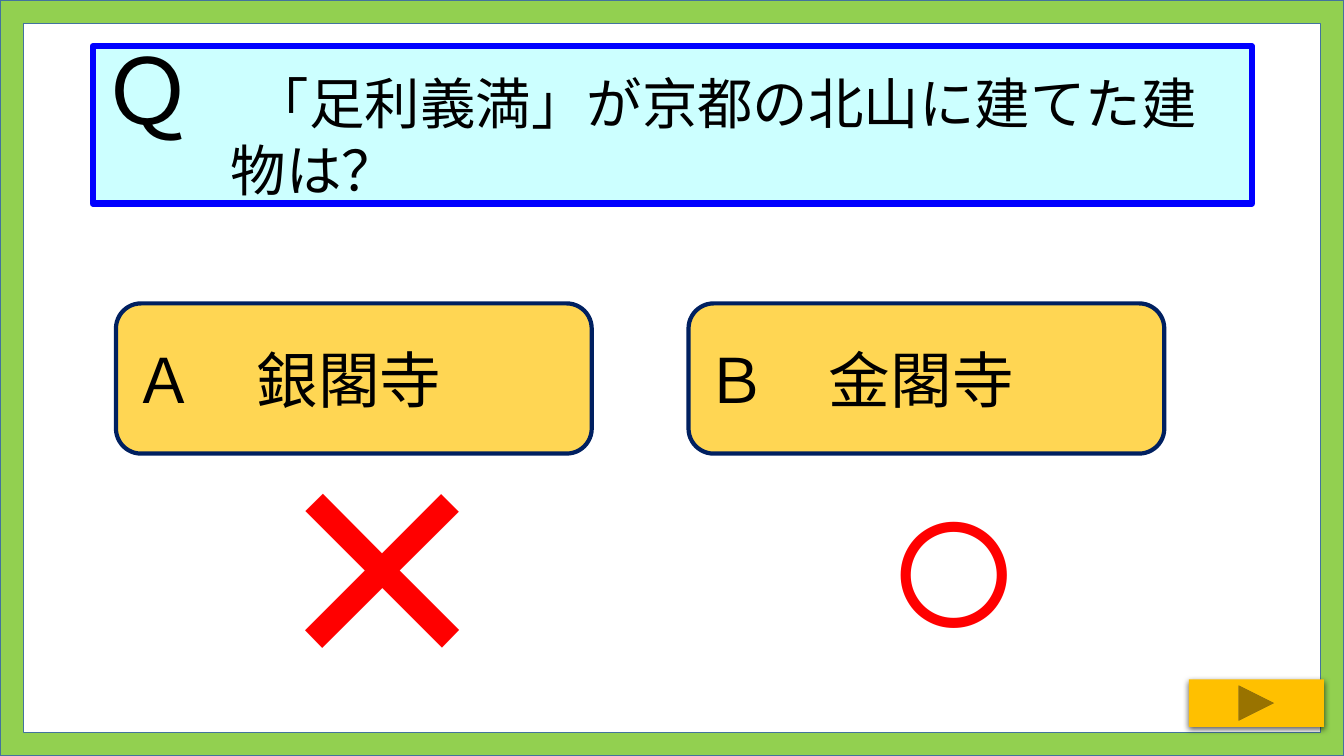
from dataclasses import dataclass
from typing import Optional

from lxml import etree
from pptx import Presentation
from pptx.dml.color import RGBColor
from pptx.enum.shapes import MSO_SHAPE
from pptx.enum.text import MSO_ANCHOR, MSO_AUTO_SIZE, PP_ALIGN
from pptx.oxml.ns import qn
from pptx.util import Inches, Pt

FRAME = MSO_SHAPE.FRAME
RECTANGLE = MSO_SHAPE.RECTANGLE
ROUNDED = MSO_SHAPE.ROUNDED_RECTANGLE
NEXT_BUTTON = MSO_SHAPE.ACTION_BUTTON_FORWARD_OR_NEXT
MIDDLE = MSO_ANCHOR.MIDDLE
GROW = MSO_AUTO_SIZE.SHAPE_TO_FIT_TEXT
LEFT, CENTER = PP_ALIGN.LEFT, PP_ALIGN.CENTER

WIDTH, HEIGHT = Inches(13.33), Inches(7.5)
ANSWER_STEP = 42.6
JAPANESE, SYMBOL = "Noto Sans CJK JP", "Arial"
COLORS = {
    "border": "92D050", "border_line": "43739E",
    "question": "CCFFFF", "question_line": "0000FF",
    "answer": "FFD653", "answer_line": "002060",
    "button": "FFC000", "text": "000000", "mark": "FF0000",
}


@dataclass(frozen=True)
class Area:
    left: float
    top: float
    width: float
    height: float

    def shifted(self, column: int) -> "Area":
        return Area(self.left + column * ANSWER_STEP, self.top, self.width, self.height)

    def lengths(self) -> tuple:
        return (int(WIDTH * self.left / 100), int(HEIGHT * self.top / 100),
                int(WIDTH * self.width / 100), int(HEIGHT * self.height / 100))


@dataclass(frozen=True)
class Panel:
    preset: int
    area: Area
    fill: str
    line: Optional[str] = None
    line_width: float = 0
    adjustment: Optional[float] = None


@dataclass(frozen=True)
class Span:
    text: str
    size: float
    font: str = JAPANESE
    color: str = "text"


@dataclass(frozen=True)
class Choice:
    label: str
    mark: str
    mark_size: float
    mark_top: float


QUESTION = [Span("Ｑ", 64.8), Span("\u3000".replace("\u3000", "　"), 43.2),
            Span("「足利義満」が京都の北山に建てた建物は？", 39.6)]
CHOICES = [Choice("Ａ　銀閣寺", "×", 247, 54.13),
           Choice("Ｂ　金閣寺", "○", 172, 54.53)]


def color(name: str) -> RGBColor:
    return RGBColor.from_string(COLORS[name])


def apply(target, values: dict) -> None:
    for name, value in values.items():
        setattr(target, name, value)


def draw_panel(page, panel: Panel):
    box = page.shapes.add_shape(panel.preset, *panel.area.lengths())
    box.shadow.inherit = False
    box.fill.solid()
    box.fill.fore_color.rgb = color(panel.fill)
    if panel.line:
        box.line.color.rgb = color(panel.line)
        box.line.width = Pt(panel.line_width)
    else:
        box.line.fill.background()
    if panel.adjustment is not None:
        box.adjustments[0] = panel.adjustment
    return box


def write(box, spans: list, align: int = LEFT, hanging: float = 0, spacing: float = 1.0):
    apply(box.text_frame, {"word_wrap": True, "vertical_anchor": MIDDLE})
    para = box.text_frame.paragraphs[0]
    apply(para, {"alignment": align, "line_spacing": spacing})
    if hanging:
        properties = para._p.get_or_add_pPr()
        properties.set("marL", str(Inches(hanging)))
        properties.set("indent", str(-Inches(hanging)))
    for span in spans:
        run = para.add_run()
        run.text = span.text
        apply(run.font, {"size": Pt(span.size), "name": span.font})
        run.font.color.rgb = color(span.color)
        east_asian = etree.SubElement(run.font._element, qn("a:ea"))
        east_asian.set("typeface", span.font)
    return para


def draw_mark(page, choice: Choice, column: int) -> None:
    area = Area(18.08, choice.mark_top, 20.7, 36.8).shifted(column)
    box = page.shapes.add_textbox(*area.lengths())
    box.text_frame.auto_size = GROW
    para = write(box, [Span(choice.mark, choice.mark_size, SYMBOL, "mark")], CENTER)
    para.space_before = Pt(0)
    before = para._p.pPr.find(qn("a:spcBef"))
    before.remove(before[0])
    etree.SubElement(before, qn("a:spcPct")).set("val", "50000")


def add_shadow(box) -> None:
    effects = box._element.spPr.find(qn("a:effectLst"))
    shadow = etree.SubElement(effects, qn("a:outerShdw"), {
        "blurRad": str(Pt(4.5)), "dist": str(Pt(1.5)), "dir": "5400000",
        "algn": "ctr", "rotWithShape": "0"})
    tone = etree.SubElement(shadow, qn("a:srgbClr"), {"val": COLORS["text"]})
    etree.SubElement(tone, qn("a:alpha"), {"val": "63000"})


def main() -> None:
    deck = Presentation()
    apply(deck, {"slide_width": WIDTH, "slide_height": HEIGHT})
    page = deck.slides.add_slide(deck.slide_layouts[6])

    draw_panel(page, Panel(FRAME, Area(0, 0, 100, 100), "border", "border_line", 1, 0.031))
    question = draw_panel(page, Panel(RECTANGLE, Area(6.9, 6.13, 86.25, 20.8),
                                      "question", "question_line", 4.5))
    write(question, QUESTION, hanging=1.27, spacing=0.9)

    for column, choice in enumerate(CHOICES):
        area = Area(8.63, 40.13, 35.4, 19.87).shifted(column)
        answer = draw_panel(page, Panel(ROUNDED, area, "answer", "answer_line", 3, 0.167))
        write(answer, [Span(choice.label, 44)], hanging=0.49)
        draw_mark(page, choice, column)

    add_shadow(draw_panel(page, Panel(NEXT_BUTTON, Area(88.45, 89.87, 10.05, 6.27), "button")))
    deck.save("out.pptx")


if __name__ == "__main__":
    main()
